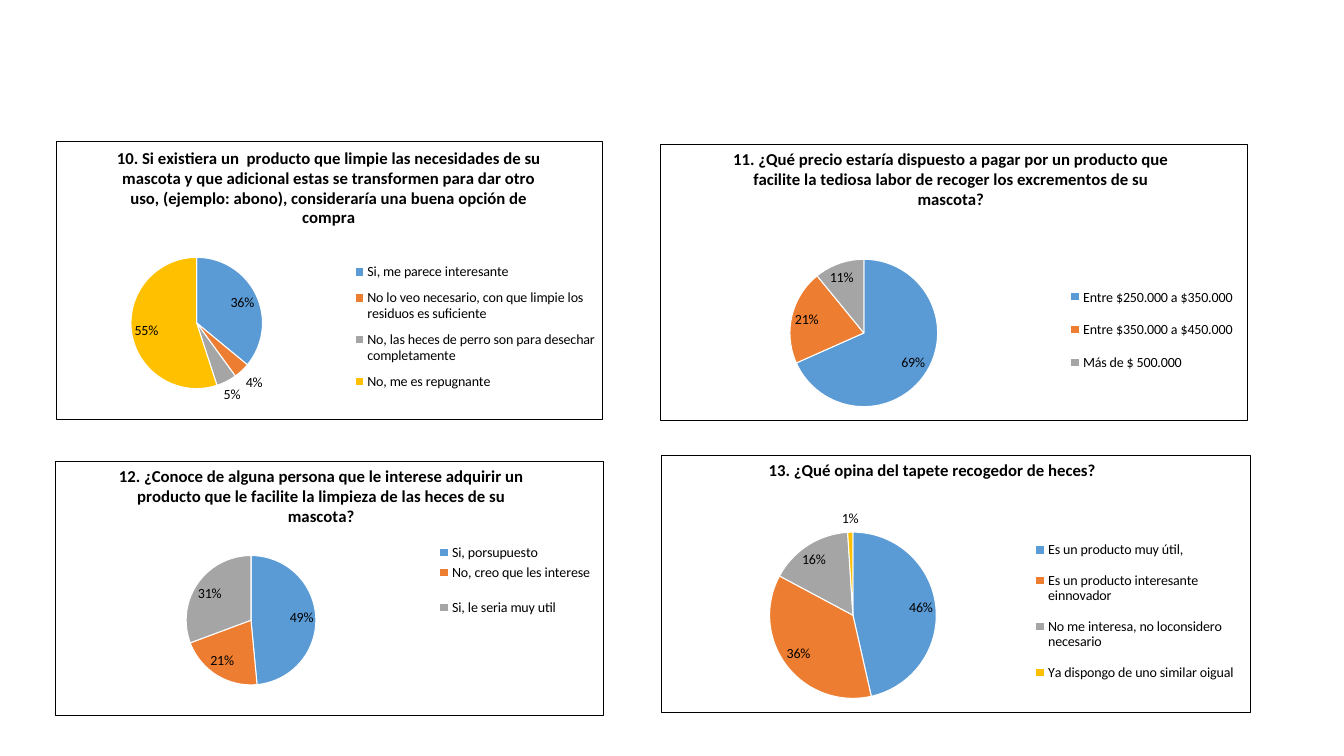
from dataclasses import dataclass

from lxml.etree import SubElement
from pptx import Presentation
from pptx.chart.data import CategoryChartData
from pptx.dml.color import RGBColor
from pptx.enum.chart import XL_CHART_TYPE, XL_LABEL_POSITION, XL_LEGEND_POSITION
from pptx.oxml import parse_xml
from pptx.oxml.ns import nsdecls, qn
from pptx.util import Inches, Pt

# Content: frame is in percent of the slide; title, pie and legend in percent of the frame
# Each box is (left, top, width, height); a title has only (left, top)
SURVEY = [
    {
        "title": "10. Si existiera un  producto que limpie las necesidades de su mascota "
                 "y que adicional estas se transformen para dar otro uso, "
                 "(ejemplo: abono), consideraría una buena opción de compra",
        "answers": [
            ("Si, me parece interesante", 36),
            ("No lo veo necesario, con que limpie los residuos es suficiente", 4),
            ("No, las heces de perro son para desechar completamente", 5),
            ("No, me es repugnante", 55),
        ],
        "frame": (4.2, 18.67, 40.7, 36.85),
        "title_place": (10.4, 0.7),
        "pie": (13.5, 41.7, 24.2, 47.3),
        "legend": (53.8, 40.5, 45.5, 52.4),
    },
    {
        "title": "11. ¿Qué precio estaría dispuesto a pagar por un producto que "
                 "facilite la tediosa labor de recoger los excrementos de su mascota?",
        "answers": [
            ("Entre $250.000 a $350.000\n", 69),
            ("Entre $350.000 a $450.000\n", 21),
            ("Más de $ 500.000\n", 11),
        ],
        "frame": (49.14, 19.1, 43.7, 36.65),
        "title_place": (11.8, 0),
        "pie": (22, 41.3, 25.2, 53.7),
        "legend": (68.7, 51.8, 30, 36.4),
    },
    {
        "title": "12. ¿Conoce de alguna persona que le interese adquirir un producto "
                 "que le facilite la limpieza de las heces de su mascota?",
        "answers": [
            ("Si, porsupuesto", 49),
            ("No, creo que les interese\n", 21),
            ("Si, le seria muy util\n", 31),
        ],
        "frame": (4.1, 61, 40.81, 33.7),
        "title_place": (11, 0),
        "pie": (23.8, 37, 23.8, 51),
        "legend": (68.9, 31.2, 30, 37.2),
    },
    {
        "title": "13. ¿Qué opina del tapete recogedor de heces?",
        "answers": [
            ("Es un producto muy útil,", 46),
            ("Es un producto interesante einnovador", 36),
            ("No me interesa, no loconsidero necesario", 16),
            ("Ya dispongo de uno similar oigual", 1),
        ],
        "frame": (49.21, 60.2, 43.89, 34.1),
        "title_place": (17.6, 0),
        "pie": (18.3, 29.7, 28.3, 65),
        "legend": (62.3, 28, 36, 65.3),
    },
]


@dataclass(frozen=True)
class Theme:
    font: str = "Calibri"
    title_size: int = 12
    body_size: int = 10
    text: str = "000000"
    border: str = "000000"
    border_width: float = 0.75
    background: str = "FFFFFF"
    slices: tuple = ("5B9BD5", "ED7D31", "A5A5A5", "FFC000")


THEME = Theme()


def style_font(font, size, bold=False):
    font.name = THEME.font
    font.size = Pt(size)
    font.bold = bold
    font.color.rgb = RGBColor.from_string(THEME.text)


def place_part(part, box, position, inner=False):
    """Give a chart part a fixed place, as shares of its chart."""
    for old_layout in part.findall(qn("c:layout")):
        part.remove(old_layout)
    layout = parse_xml(f"<c:layout {nsdecls('c')}><c:manualLayout/></c:layout>")
    settings = [("layoutTarget", "inner")] if inner else []
    settings += [("xMode", "edge"), ("yMode", "edge")]
    settings += [(name, f"{share / 100:g}") for name, share in zip("xywh", box)]
    for name, value in settings:
        SubElement(layout[0], qn(f"c:{name}"), val=value)
    part.insert(position, layout)


def place_after(part, box, neighbour):
    """Place a chart part, with its layout put right after the named child."""
    place_part(part, box, part.index(part.find(qn(neighbour))) + 1)


def frame_chart(chart):
    """Draw the background and the thin border around the chart."""
    properties = parse_xml(
        f"<c:spPr {nsdecls('c', 'a')}>"
        f'<a:solidFill><a:srgbClr val="{THEME.background}"/></a:solidFill>'
        f'<a:ln w="{Pt(THEME.border_width)}"><a:solidFill>'
        f'<a:srgbClr val="{THEME.border}"/></a:solidFill></a:ln></c:spPr>'
    )
    chart.element.find(qn("c:chart")).addnext(properties)


def add_question(slide, question, slide_size):
    # Data and place
    data = CategoryChartData()
    data.categories = [answer for answer, _ in question["answers"]]
    data.add_series(question["title"], [value for _, value in question["answers"]])
    box = [int(share / 100 * slide_size[index % 2])
           for index, share in enumerate(question["frame"])]
    chart = slide.shapes.add_chart(XL_CHART_TYPE.PIE, *box, data).chart
    style_font(chart.font, THEME.body_size)
    frame_chart(chart)

    # Title
    chart.has_title = True
    title = chart.chart_title
    title.include_in_layout = False
    run = title.text_frame.paragraphs[0].add_run()
    run.text = question["title"]
    style_font(run.font, THEME.title_size, bold=True)
    place_after(chart.element.find(".//" + qn("c:title")), question["title_place"], "c:tx")

    # Slices
    plot = chart.plots[0]
    plot.vary_by_categories = True
    for index in range(len(question["answers"])):
        slice_format = plot.series[0].points[index].format
        slice_format.fill.solid()
        slice_format.fill.fore_color.rgb = RGBColor.from_string(THEME.slices[index])
        slice_format.line.color.rgb = RGBColor.from_string(THEME.background)
        slice_format.line.width = Pt(THEME.border_width)
    place_part(chart.element.find(".//" + qn("c:plotArea")), question["pie"], 0, inner=True)

    # Labels: whole percent values, shown as given since rounded sums may miss 100
    plot.has_data_labels = True
    labels = plot.data_labels
    labels.show_value = True
    labels.number_format = '0"%"'
    labels.number_format_is_linked = False
    labels.position = XL_LABEL_POSITION.BEST_FIT
    style_font(labels.font, THEME.body_size)

    # Legend
    chart.has_legend = True
    legend = chart.legend
    legend.position = XL_LEGEND_POSITION.RIGHT
    legend.include_in_layout = False
    style_font(legend.font, THEME.body_size)
    place_after(chart.element.find(".//" + qn("c:legend")), question["legend"], "c:legendPos")


def main():
    presentation = Presentation()
    presentation.slide_width = Inches(13.33)
    presentation.slide_height = Inches(7.5)
    slide = presentation.slides.add_slide(presentation.slide_layouts[6])
    slide_size = (presentation.slide_width, presentation.slide_height)
    for question in SURVEY:
        add_question(slide, question, slide_size)
    presentation.save("out.pptx")


if __name__ == "__main__":
    main()
